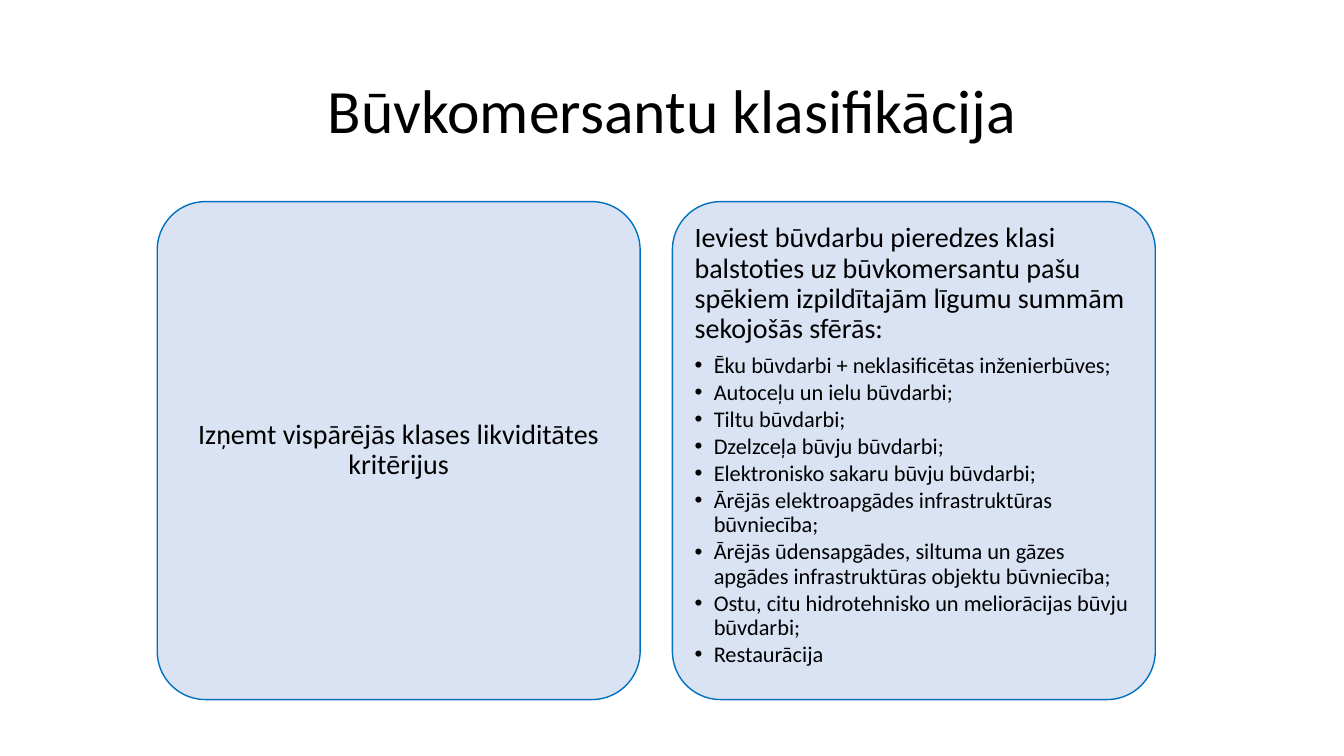
from lxml import etree
from pptx import Presentation, util as u
from pptx.dml.color import RGBColor
from pptx.enum import shapes, text
from pptx.oxml import ns

BLACK = RGBColor(0x00, 0x00, 0x00)
PALE_BLUE = RGBColor(0xDA, 0xE3, 0xF3)
BLUE = RGBColor(0x00, 0x70, 0xC0)
FONT = "Calibri"
SLIDE_WIDTH = u.Inches(13.33)
SLIDE_HEIGHT = u.Inches(7.5)
COLUMN = SLIDE_WIDTH / 100
ROW = SLIDE_HEIGHT / 100
CARD_LEFT, CARD_TOP, CARD_WIDTH, CARD_HEIGHT = 11.7, 26.67, 35.93, 65.87
CARD_STEP = 38.33
BULLET_INDENT = u.Inches(0.19)

TITLE = "Būvkomersantu klasifikācija"
LIQUIDITY = "Izņemt vispārējās klases likviditātes kritērijus"
EXPERIENCE = (
    "Ieviest būvdarbu pieredzes klasi balstoties uz būvkomersantu pašu "
    "spēkiem izpildītajām līgumu summām sekojošās sfērās:"
)
FIELDS = [
    "Ēku būvdarbi + neklasificētas inženierbūves;",
    "Autoceļu un ielu būvdarbi;",
    "Tiltu būvdarbi;",
    "Dzelzceļa būvju būvdarbi;",
    "Elektronisko sakaru būvju būvdarbi;",
    "Ārējās elektroapgādes infrastruktūras būvniecība;",
    "Ārējās ūdensapgādes, siltuma un gāzes apgādes infrastruktūras objektu būvniecība;",
    "Ostu, citu hidrotehnisko un meliorācijas būvju būvdarbi;",
    "Restaurācija",
]


def grid_box(left, top, width, height):
    return [round(length) for length in
            (left * COLUMN, top * ROW, width * COLUMN, height * ROW)]


def write_paragraph(paragraph, words, size, alignment, space_after=0):
    paragraph.text = words
    paragraph.alignment = alignment
    paragraph.line_spacing = 0.9
    paragraph.space_after = u.Pt(space_after)
    for run in paragraph.runs:
        run.font.name = FONT
        run.font.size = u.Pt(size)
        run.font.color.rgb = BLACK


def add_bullet(text_frame, words):
    paragraph = text_frame.add_paragraph()
    paragraph.level = 1
    properties = paragraph._p.get_or_add_pPr()
    properties.set("marL", str(BULLET_INDENT))
    properties.set("indent", str(-BULLET_INDENT))
    etree.SubElement(properties, ns.qn("a:buFont")).set("typeface", "Arial")
    etree.SubElement(properties, ns.qn("a:buChar")).set("char", "•")
    write_paragraph(paragraph, words, 16, text.PP_ALIGN.LEFT, 2)


def add_title(slide):
    title = slide.shapes.add_textbox(*grid_box(6.9, 5.33, 86.26, 19.33))
    text_frame = title.text_frame
    text_frame.word_wrap = True
    text_frame.vertical_anchor = text.MSO_ANCHOR.MIDDLE
    write_paragraph(text_frame.paragraphs[0], TITLE, 44, text.PP_ALIGN.CENTER)


def add_card(slide, position, words, alignment, anchor):
    left = CARD_LEFT + position * CARD_STEP
    card = slide.shapes.add_shape(
        shapes.MSO_SHAPE.ROUNDED_RECTANGLE,
        *grid_box(left, CARD_TOP, CARD_WIDTH, CARD_HEIGHT))
    card.adjustments[0] = 0.1
    card.shadow.inherit = False
    card.fill.solid()
    card.fill.fore_color.rgb = PALE_BLUE
    card.line.color.rgb = BLUE
    card.line.width = u.Pt(1)
    text_frame = card.text_frame
    text_frame.word_wrap = True
    text_frame.vertical_anchor = anchor
    text_frame.margin_left = text_frame.margin_right = u.Inches(0.08)
    text_frame.margin_top = text_frame.margin_bottom = u.Inches(0.08)
    write_paragraph(text_frame.paragraphs[0], words, 20, alignment, 7)
    return text_frame


def main():
    presentation = Presentation()
    presentation.slide_width = SLIDE_WIDTH
    presentation.slide_height = SLIDE_HEIGHT
    slide = presentation.slides.add_slide(presentation.slide_layouts[6])
    add_title(slide)
    add_card(slide, 0, LIQUIDITY, text.PP_ALIGN.CENTER, text.MSO_ANCHOR.MIDDLE)
    experience = add_card(slide, 1, EXPERIENCE, text.PP_ALIGN.LEFT, text.MSO_ANCHOR.TOP)
    for field in FIELDS:
        add_bullet(experience, field)
    presentation.save("out.pptx")


if __name__ == "__main__":
    main()
